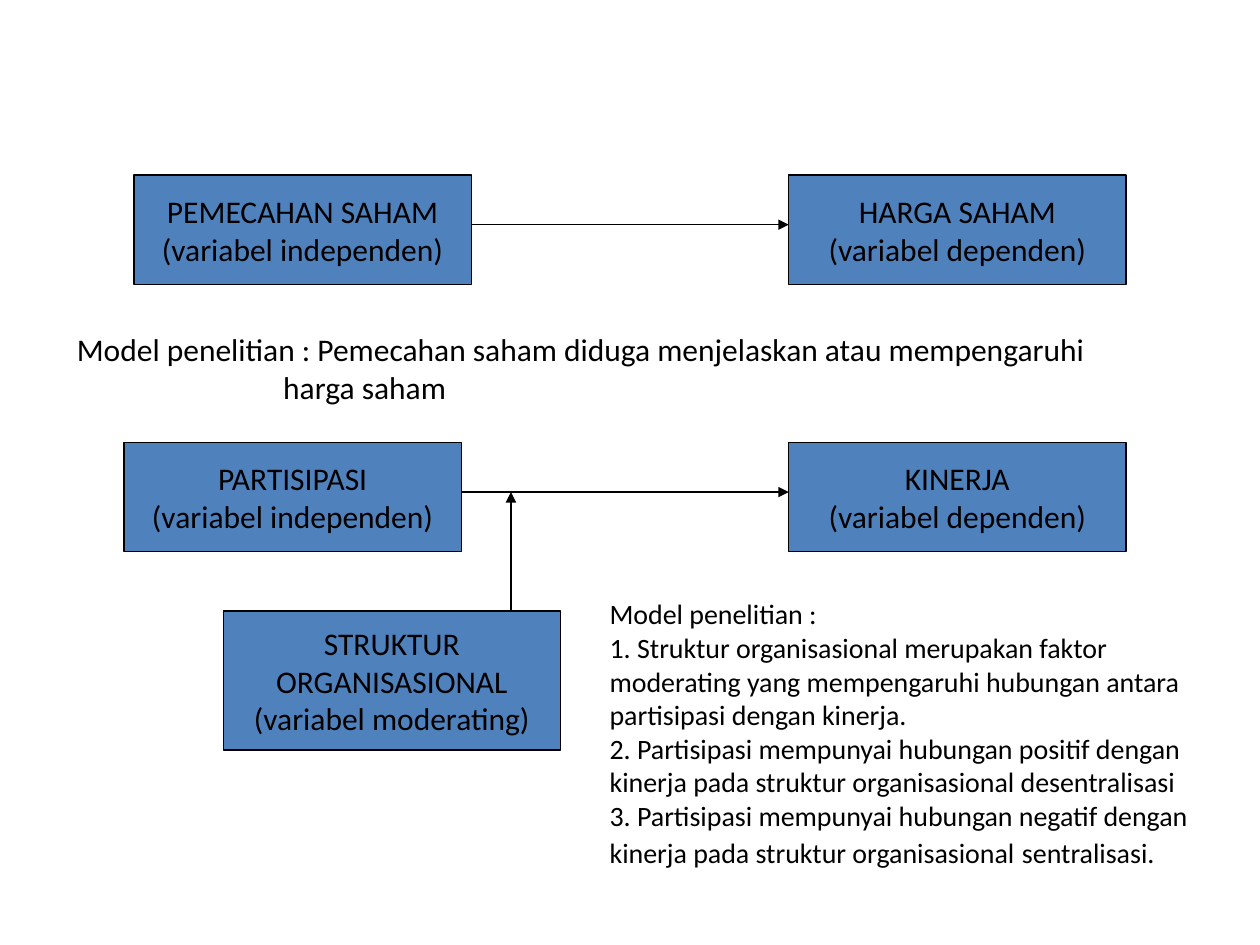
from lxml import etree
from pptx import Presentation
from pptx import util as u
from pptx.dml.color import RGBColor
from pptx.enum import shapes, text
from pptx.oxml.ns import qn

BLUE = RGBColor(0x4F, 0x81, 0xBD)
BLACK = RGBColor(0, 0, 0)


class Page:
    font = "Calibri"
    size = 18
    line = 0.75

    def __init__(self, slide):
        self.slide = slide

    def label(self, frame, lines, size, align):
        for i, line in enumerate(lines):
            par = frame.paragraphs[0] if i == 0 else frame.add_paragraph()
            par.text = line
            par.alignment = align
            par.font.name = self.font
            par.font.size = u.Pt(size)
            par.font.color.rgb = BLACK

    def box(self, x, y, lines, high=2.2):
        box = self.slide.shapes.add_shape(
            shapes.MSO_SHAPE.RECTANGLE, u.Cm(x), u.Cm(y), u.Cm(WIDE), u.Cm(high))
        box.shadow.inherit = False
        box.fill.solid()
        box.fill.fore_color.rgb = BLUE
        box.line.color.rgb = BLACK
        box.line.width = u.Pt(self.line)
        frame = box.text_frame
        frame.word_wrap = False
        frame.vertical_anchor = text.MSO_ANCHOR.MIDDLE
        self.label(frame, lines, self.size, text.PP_ALIGN.CENTER)

    def arrow(self, x1, y1, x2, y2):
        link = self.slide.shapes.add_connector(
            shapes.MSO_CONNECTOR.STRAIGHT, u.Cm(x1), u.Cm(y1), u.Cm(x2), u.Cm(y2))
        link.line.color.rgb = BLACK
        link.line.width = u.Pt(self.line)
        props = link.element.spPr
        etree.SubElement(props.find(qn("a:ln")), qn("a:tailEnd"), type="triangle")
        etree.SubElement(props, qn("a:effectLst"))

    def note(self, x, y, wide, high, lines, size):
        box = self.slide.shapes.add_textbox(u.Cm(x), u.Cm(y), u.Cm(wide), u.Cm(high))
        frame = box.text_frame
        frame.word_wrap = True
        frame.auto_size = text.MSO_AUTO_SIZE.SHAPE_TO_FIT_TEXT
        self.label(frame, lines, size, text.PP_ALIGN.LEFT)
        return frame.paragraphs


# Shared places, in cm
WIDE = 6.8
RIGHT = 15.9
DROP = 1  # from a box's top to its arrow

deck = Presentation()
deck.slide_width, deck.slide_height = u.Cm(25.4), u.Cm(19.05)
page = Page(deck.slides.add_slide(deck.slide_layouts[6]))

# Two models: cause on the left, effect on the right
models = [(2.7, 3.53, "PEMECAHAN SAHAM", "HARGA SAHAM"),
          (2.5, 8.92, "PARTISIPASI", "KINERJA")]
for left, top, cause, effect in models:
    page.box(left, top, [cause, "(variabel independen)"])
    page.box(RIGHT, top, [effect, "(variabel dependen)"])
    page.arrow(left + WIDE, top + DROP, RIGHT, top + DROP)

# Moderating variable, pointing at the second arrow
page.box(4.5, 12.32, ["STRUKTUR", "ORGANISASIONAL", "(variabel moderating)"], 2.8)
page.arrow(10.3, 12.32, 10.3, 8.92 + DROP)

# Note on the first model, its second line indented
pars = page.note(1.3, 6.53, 22.8, 1.8, [
    "Model penelitian : Pemecahan saham diduga menjelaskan atau mempengaruhi",
    "harga saham"], 18)
pars[1]._p.get_or_add_pPr().set("marL", str(u.Cm(4.16)))

# Note on the second model
pars = page.note(12.04, 11.91, 13.36, 5.77, [
    "Model penelitian :",
    "1. Struktur organisasional merupakan faktor",
    "moderating yang mempengaruhi hubungan antara",
    "partisipasi dengan kinerja.",
    "2. Partisipasi mempunyai hubungan positif dengan",
    "kinerja pada struktur organisasional desentralisasi",
    "3. Partisipasi mempunyai hubungan negatif dengan",
    "kinerja pada struktur organisasional"], 16)
for word, size in [(" ", 18), ("sentralisasi.", 16)]:
    run = pars[-1].add_run()
    run.text = word
    run.font.size = u.Pt(size)

deck.save("out.pptx")
